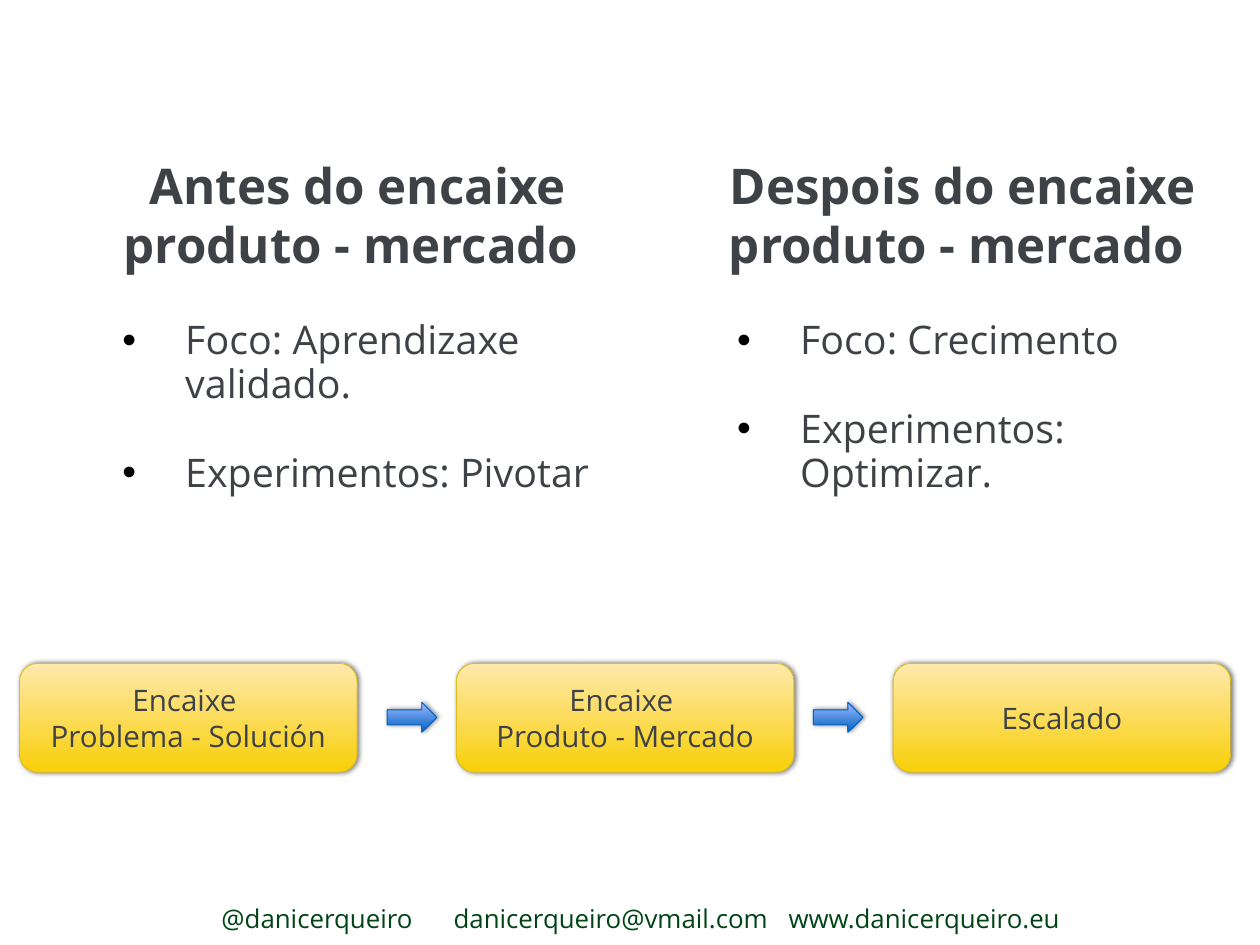
from lxml import etree
from pptx import Presentation
from pptx.dml.color import RGBColor
from pptx.enum.shapes import MSO_SHAPE
from pptx.enum.text import MSO_ANCHOR, MSO_AUTO_SIZE, PP_ALIGN
from pptx.oxml.ns import qn
from pptx.util import Emu, Pt

ROUNDED, ARROW = MSO_SHAPE.ROUNDED_RECTANGLE, MSO_SHAPE.RIGHT_ARROW
TOP, MIDDLE = MSO_ANCHOR.TOP, MSO_ANCHOR.MIDDLE
LEFT, CENTER = PP_ALIGN.LEFT, PP_ALIGN.CENTER
NO_AUTOFIT = MSO_AUTO_SIZE.NONE

EMU_PER_PX = 9144  # 100 px to the inch
FONT = "Open Sans"
COLORS = {
    "text": "3E4247", "footer": "004416", "bullet": "000000", "shadow": "000000",
    "stage_low": "F8CF07", "stage_high": "FFE9AD", "stage_line": "DCBC1E",
    "arrow_low": "0065C3", "arrow_high": "A0B8FF", "arrow_line": "0063BF",
}


def px(length):
    return Emu(length * EMU_PER_PX)


def rgb(name):
    return RGBColor.from_string(COLORS[name])


def place(shape, left, top, width, height):
    shape.left, shape.top = px(left), px(top)
    shape.width, shape.height = px(width), px(height)


def add_bullet(paragraph, indent):
    properties = paragraph._p.get_or_add_pPr()
    properties.set("marL", str(px(indent)))
    properties.set("indent", str(-px(indent)))
    bullet_color = etree.SubElement(properties, qn("a:buClr"))
    etree.SubElement(bullet_color, qn("a:srgbClr"), val=COLORS["bullet"])
    etree.SubElement(properties, qn("a:buFont"), typeface="Arial")
    etree.SubElement(properties, qn("a:buChar"), char="•")


def add_tabs(paragraph, positions):
    tab_list = etree.SubElement(paragraph._p.get_or_add_pPr(), qn("a:tabLst"))
    for position in positions:
        etree.SubElement(tab_list, qn("a:tab"), pos=str(px(position)), algn="l")


def write_text(shape, lines, size, color="text", bold=False, align=LEFT, anchor=MIDDLE,
               insets=(10, 5), spacing=1.0, gap=0, bullet_indent=None, tabs=()):
    """Fill a shape with one formatted paragraph for each line."""
    frame = shape.text_frame
    frame.word_wrap = True
    frame.auto_size = NO_AUTOFIT
    frame.vertical_anchor = anchor
    frame.margin_left = frame.margin_right = px(insets[0])
    frame.margin_top = frame.margin_bottom = px(insets[1])
    for index, line in enumerate(lines):
        paragraph = frame.add_paragraph() if index else frame.paragraphs[0]
        paragraph.text = line
        if bullet_indent:
            add_bullet(paragraph, bullet_indent)
        if tabs:
            add_tabs(paragraph, tabs)
        paragraph.alignment = align
        paragraph.line_spacing = spacing
        paragraph.space_before = Pt(gap if index else 0)
        font = paragraph.font
        font.name, font.size, font.bold = FONT, Pt(size), bold
        font.color.rgb = rgb(color)


def add_glossy_shape(slide, kind, style, box):
    """Add a shape with a vertical gradient, a thin line and a soft shadow."""
    shape = slide.shapes.add_shape(kind, *map(px, box))
    shape.fill.gradient()
    shape.fill.gradient_angle = 90
    for stop, position, tone in zip(shape.fill.gradient_stops, (0, 1), ("low", "high")):
        stop.position = position
        stop.color.rgb = rgb(f"{style}_{tone}")
    shape.line.color.rgb = rgb(f"{style}_line")
    shape.line.width = Pt(0.75)
    shape.shadow.inherit = False
    effects = shape._element.spPr.find(qn("a:effectLst"))
    shadow = etree.SubElement(effects, qn("a:outerShdw"), blurRad=str(Pt(4)),
                              dist=str(Pt(1)), dir="0", rotWithShape="0")
    shadow_color = etree.SubElement(shadow, qn("a:srgbClr"), val=COLORS["shadow"])
    etree.SubElement(shadow_color, qn("a:alpha"), val="50000")
    return shape


def fill_heading(placeholder, text, box):
    place(placeholder, *box)
    write_text(placeholder, [text], 40, bold=True, align=CENTER)


def fill_list(placeholder, items, box):
    place(placeholder, *box)
    write_text(placeholder, items, 32, anchor=TOP, insets=(14, 7), spacing=0.93,
               gap=36, bullet_indent=71)


def add_stages(slide, stages, box):
    """Spread the stages evenly over the box, with an arrow in each gap."""
    left, top, width, height = box
    stage_width, arrow_width, arrow_height = 381, 56, 34
    stage_step = (width - stage_width) // (len(stages) - 1)
    for index, lines in enumerate(stages):
        stage_box = (left + index * stage_step, top, stage_width, height)
        stage = add_glossy_shape(slide, ROUNDED, "stage", stage_box)
        write_text(stage, lines, 24, align=CENTER)
    arrow_start, arrow_step = 415, 481
    arrow_top = top + (height - arrow_height) // 2
    for index in range(len(stages) - 1):
        arrow_box = (left + arrow_start + index * arrow_step, arrow_top,
                     arrow_width, arrow_height)
        add_glossy_shape(slide, ARROW, "arrow", arrow_box)


def add_footer(slide, contacts, tabs, box):
    footer = slide.shapes.add_textbox(*map(px, box))
    write_text(footer, ["\t".join(contacts)], 21, color="footer", insets=(0, 6),
               spacing=1.2, tabs=tabs)


def main():
    presentation = Presentation()
    presentation.slide_width, presentation.slide_height = px(1422), px(1067)
    slide = presentation.slides.add_slide(presentation.slide_layouts[4])
    parts = {part.placeholder_format.idx: part for part in slide.placeholders}
    title = parts[0]._element
    title.getparent().remove(title)

    # Two columns: before and after the fit
    fill_heading(parts[1], "Antes do encaixe produto - mercado ", (101, 191, 605, 101))
    fill_list(parts[2], ["Foco: Aprendizaxe validado.", "Experimentos: Pivotar"],
              (124, 354, 655, 300))
    fill_heading(parts[3], "Despois do encaixe produto - mercado ", (784, 191, 605, 101))
    fill_list(parts[4], ["Foco: Crecimento", "Experimentos: Optimizar."],
              (818, 354, 610, 214))

    # Stages of the process
    add_stages(slide, [["Encaixe ", "Problema - Solución"],
                       ["Encaixe ", "Produto - Mercado"],
                       ["Escalado"]], (22, 749, 1367, 123))

    # Contact line
    add_footer(slide, ["@danicerqueiro", "danicerqueiro@vmail.com", "www.danicerqueiro.eu"],
               (262, 640), (250, 1008, 1000, 50))
    presentation.save("out.pptx")


if __name__ == "__main__":
    main()
